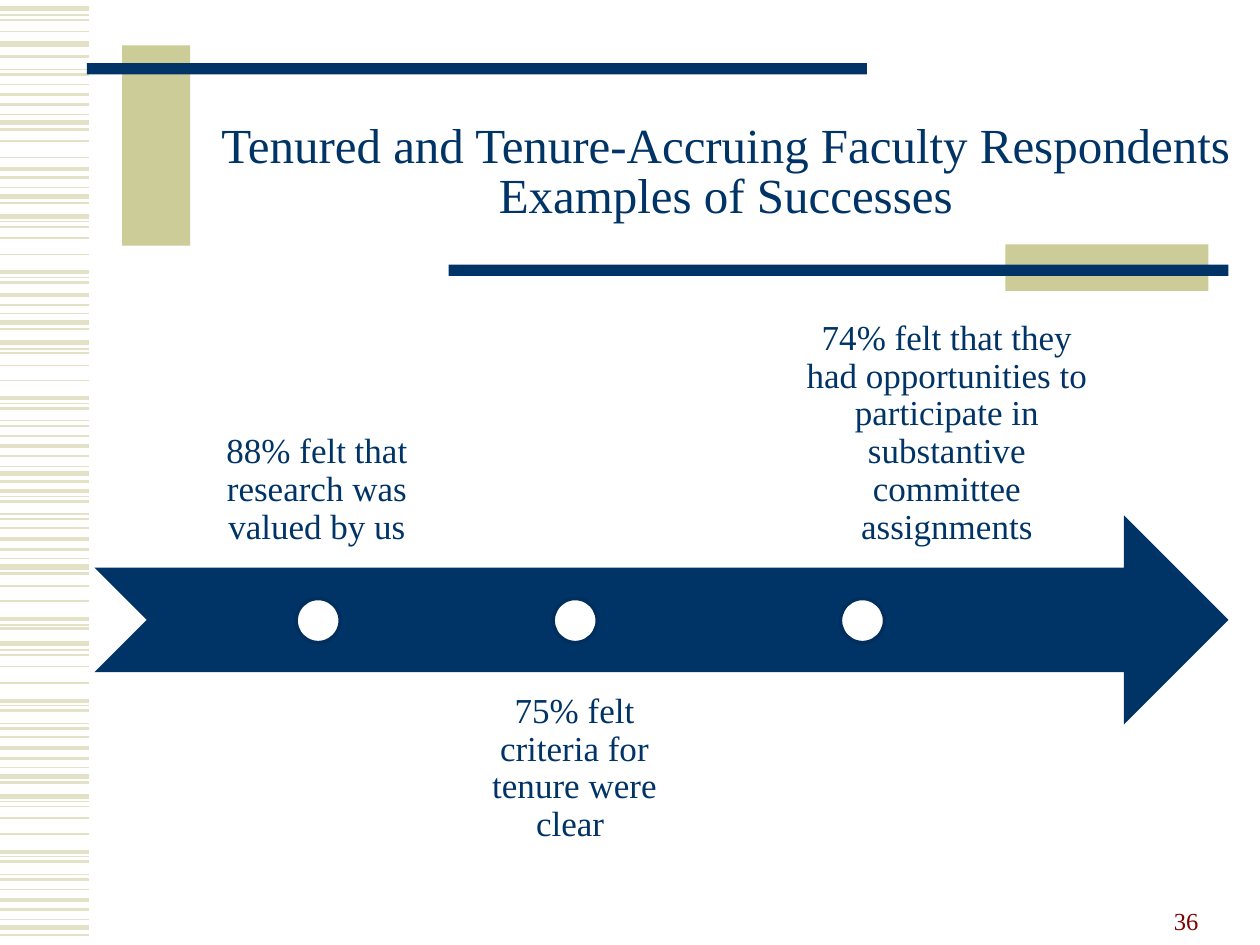
from lxml import etree
from pptx import Presentation
from pptx import util as u
from pptx.dml.color import RGBColor
from pptx.enum import shapes, text
from pptx.oxml.ns import qn

NAVY = RGBColor(0x00, 0x33, 0x66)
DOT_EDGE = RGBColor(0x00, 0x2E, 0x5D)
KHAKI = RGBColor(0xCC, 0xCC, 0x99)
PALE_KHAKI = RGBColor(0xE3, 0xE2, 0xC7)
MAROON = RGBColor(0x80, 0x00, 0x00)
WHITE = RGBColor(0xFF, 0xFF, 0xFF)

# Heights of the stripes in the left margin, by line width in points
STRIPES = {
    0.75: [0.12, 0.55, 0.91, 1.49, 1.76, 2.2, 2.49, 2.77, 3.2, 3.34, 3.7, 3.94,
           4.08, 4.43, 4.96, 5.16, 5.6, 5.74, 6.09, 6.36, 6.8, 6.94, 7.3],
    1: [0.16, 0.25, 0.67, 1.12, 1.25, 1.8, 1.89, 2.02, 2.8, 2.9, 3.02, 3.46,
        4.19, 4.65, 4.77, 5.2, 5.29, 5.42, 5.85, 6.4, 6.49, 6.62, 7.06],
    1.5: [0.45, 0.59, 0.83, 1.03, 1.41, 1.61, 2.24, 2.42, 2.61, 3.24, 3.38,
          3.62, 3.82, 3.98, 4.12, 4.36, 4.55, 4.99, 5.64, 5.78, 6.02, 6.21,
          6.84, 6.98, 7.22, 7.42],
    2.25: [0.75, 1.34, 2.16, 2.34, 3.16, 3.54, 3.9, 4.28, 4.91, 5.56, 5.94,
           6.76, 7.14],
    3: [0.07, 0.35, 0.97, 1.56, 1.72, 2.56, 2.72, 3.76, 4.5, 5.11, 6.16, 6.32,
        7.36],
}
STRIPE_LENGTH = 0.71

# Left, width, whether above the arrow, dot left, wording
SUCCESSES = [
    (1.44, 2.15, True, 2.35, "88% felt that research was valued by us"),
    (3.61, 1.9, False, 4.39, "75% felt criteria for tenure were clear "),
    (6.2, 2.63, True, 6.67, "74% felt that they had opportunities to "
     "participate in substantive committee assignments"),
]
LABEL_HEIGHT = 1.66
LABEL_TOP_ABOVE, LABEL_TOP_BELOW = 2.84, 5.34
DOT_TOP, DOT_SIZE = 4.75, 0.35


def write(frame, wording, *, size, color=NAVY, font="Times New Roman",
          align=text.PP_ALIGN.CENTER, anchor=text.MSO_ANCHOR.TOP,
          spacing=1.0, inset=None):
    frame.word_wrap = True
    frame.vertical_anchor = anchor
    if inset is not None:
        frame.margin_left = frame.margin_right = u.Inches(inset)
        frame.margin_top = frame.margin_bottom = u.Inches(inset)
    paragraph = frame.paragraphs[0]
    paragraph.text = wording
    paragraph.alignment = align
    paragraph.line_spacing = spacing
    for run in paragraph.runs:
        run.font.size = u.Pt(size)
        run.font.name = font
        run.font.color.rgb = color


class SlideBuilder:
    def __init__(self, slide):
        self.shapes = slide.shapes

    def stripe(self, y, width):
        line = self.shapes.add_connector(
            shapes.MSO_CONNECTOR.STRAIGHT, 0, u.Inches(y),
            u.Inches(STRIPE_LENGTH), u.Inches(y))
        line.line.color.rgb = PALE_KHAKI
        line.line.width = u.Pt(width)
        etree.SubElement(line._element.spPr, qn("a:effectLst"))

    def shape(self, kind, box, fill, edge=None, edge_width=2):
        item = self.shapes.add_shape(kind, *map(u.Inches, box))
        item.shadow.inherit = False
        item.fill.solid()
        item.fill.fore_color.rgb = fill
        if edge is None:
            item.line.fill.background()
        else:
            item.line.color.rgb = edge
            item.line.width = u.Pt(edge_width)

    def label(self, box, wording, **style):
        textbox = self.shapes.add_textbox(*map(u.Inches, box))
        write(textbox.text_frame, wording, **style)


def main():
    deck = Presentation()
    deck.slide_width, deck.slide_height = u.Inches(10), u.Inches(7.5)
    builder = SlideBuilder(deck.slides.add_slide(deck.slide_layouts[6]))
    kinds, anchors = shapes.MSO_SHAPE, text.MSO_ANCHOR

    for width, heights in STRIPES.items():
        for y in heights:
            builder.stripe(y, width)

    for box, fill in [((0.97, 0.36, 0.54, 1.59), KHAKI),
                      ((0.69, 0.5, 6.19, 0.09), NAVY),
                      ((7.98, 1.94, 1.61, 0.37), KHAKI),
                      ((3.56, 2.1, 6.19, 0.09), NAVY)]:
        builder.shape(kinds.RECTANGLE, box, fill)

    builder.label((1.6, 0.75, 8.32, 1.25),
                  "Tenured and Tenure-Accruing Faculty Respondents\v"
                  "Examples of Successes",
                  size=28, anchor=anchors.MIDDLE, spacing=0.85)

    builder.shape(kinds.NOTCHED_RIGHT_ARROW, (0.75, 4.09, 9, 1.66), NAVY)
    for left, width, above, dot_left, wording in SUCCESSES:
        top = LABEL_TOP_ABOVE if above else LABEL_TOP_BELOW
        builder.label((left, top, width, LABEL_HEIGHT), wording, size=20,
                      anchor=anchors.BOTTOM if above else anchors.TOP,
                      spacing=0.9, inset=0.16)
        builder.shape(kinds.OVAL, (dot_left, DOT_TOP, DOT_SIZE, DOT_SIZE),
                      WHITE, edge=DOT_EDGE)

    builder.label((7.21, 6.97, 2.4, 0.5), "36", size=14, color=MAROON,
                  align=text.PP_ALIGN.RIGHT, anchor=anchors.BOTTOM)

    deck.save("out.pptx")


if __name__ == "__main__":
    main()
